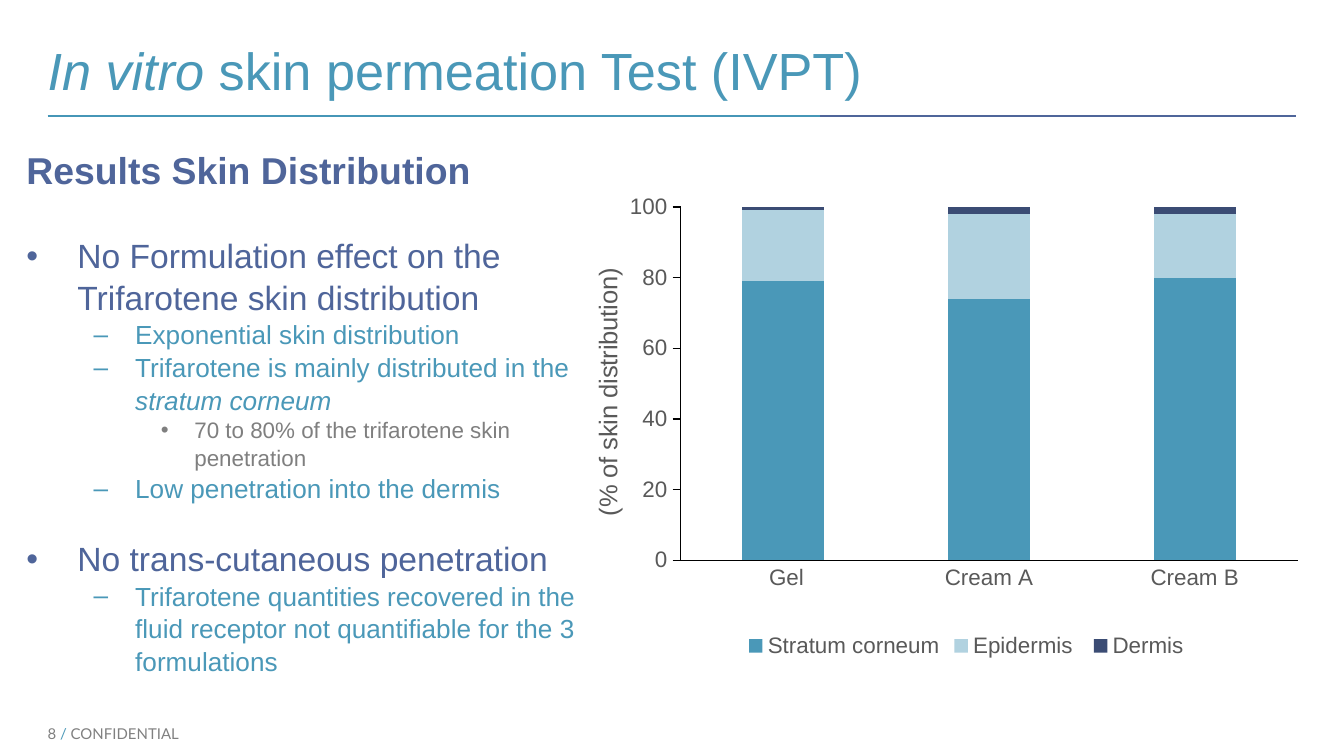
from dataclasses import dataclass
from typing import NamedTuple

from lxml.etree import SubElement
from pptx import Presentation
from pptx.chart.data import CategoryChartData
from pptx.dml.color import RGBColor
from pptx.enum.chart import XL_CHART_TYPE as ChartType
from pptx.enum.chart import XL_LEGEND_POSITION as LegendPos
from pptx.enum.chart import XL_TICK_MARK as Tick
from pptx.enum.shapes import MSO_CONNECTOR as Connector
from pptx.enum.text import MSO_ANCHOR as Anchor
from pptx.enum.text import MSO_AUTO_SIZE as AutoSize
from pptx.enum.text import PP_ALIGN as Align
from pptx.oxml.ns import qn
from pptx.util import Inches, Pt


@dataclass(frozen=True)
class Theme:
    font: str = "Arial"
    footer_font: str = "Lato"
    teal: str = "4A98B8"
    rule_teal: str = "4696B7"
    indigo: str = "4F659A"
    pale: str = "B1D2E0"
    navy: str = "3B4C74"
    grey: str = "7F7F7F"
    footer_grey: str = "808080"
    chart_text: str = "595959"
    black: str = "000000"
    title: float = 28
    heading: float = 20
    axis_title: float = 13.7
    labels: float = 12
    footer: float = 8


class Level(NamedTuple):
    mark: str
    size: float
    color: str
    margin: float
    hanging: float


class Item(NamedTuple):
    level: int
    runs: tuple[str, ...]  # every second run is italic
    before: float = 0


class Area(NamedTuple):
    col: float
    row: float
    cols: float
    rows: float


class Series(NamedTuple):
    name: str
    values: tuple[int, ...]
    color: str


THEME = Theme()
COLUMNS, ROWS = 100, 56.25
CELL = Inches(10) / COLUMNS
LEFT, RIGHT, RULE_SPLIT, RULE_ROW = 3.54, 96.46, 61, 8.62
LINE_SPACING = 1.04

LEVELS = (
    Level("•", 18, THEME.indigo, 0.38, 0.38),
    Level("–", 14, THEME.teal, 0.81, 0.31),
    Level("•", 12, THEME.grey, 1.25, 0.25),
)
FINDINGS = (
    Item(0, ("No Formulation effect on the Trifarotene skin distribution",), 22.5),
    Item(1, ("Exponential skin distribution",)),
    Item(1, ("Trifarotene is mainly distributed in the ", "stratum corneum")),
    Item(2, ("70 to 80% of the trifarotene skin penetration",)),
    Item(1, ("Low penetration into the dermis",)),
    Item(0, ("No trans-cutaneous penetration",), 17.7),
    Item(1, ("Trifarotene quantities recovered in the fluid receptor "
             "not quantifiable for the 3 formulations",)),
)
FORMULATIONS = (" Gel", "Cream A", "Cream B")
SKIN_LAYERS = (
    Series("Stratum corneum", (79, 74, 80), THEME.teal),
    Series("Epidermis ", (20, 24, 18), THEME.pale),
    Series("Dermis", (1, 2, 2), THEME.navy),
)


def grid(cells: float) -> int:
    return round(cells * CELL)


def rgb(color: str) -> RGBColor:
    return RGBColor.from_string(color)


def style(font, size: float, color: str, name: str = THEME.font, bold: bool = False) -> None:
    font.size, font.name, font.bold = Pt(size), name, bold
    font.color.rgb = rgb(color)


def style_line(line, color: str, width: float) -> None:
    line.fill.solid()
    line.fill.fore_color.rgb = rgb(color)
    line.width = Pt(width)


def place(shape, area: Area, anchor=Anchor.TOP):
    """Put a text shape on the grid, without insets."""
    shape.left, shape.top, shape.width, shape.height = map(grid, area)
    frame = shape.text_frame
    frame.margin_left = frame.margin_right = frame.margin_top = frame.margin_bottom = 0
    frame.word_wrap, frame.auto_size = True, AutoSize.NONE
    frame.vertical_anchor = anchor
    return frame


def set_bullet(paragraph, level: Level) -> None:
    props = paragraph._p.get_or_add_pPr()
    props.set("marL", str(Inches(level.margin)))
    props.set("indent", str(-Inches(level.hanging)))
    if level.mark:
        SubElement(SubElement(props, qn("a:buClr")), qn("a:srgbClr"), val=level.color)
        SubElement(props, qn("a:buFont"), typeface=THEME.font)
        SubElement(props, qn("a:buChar"), char=level.mark)
    else:
        SubElement(props, qn("a:buNone"))


def write_item(paragraph, item: Item, level: Level, bold: bool = False) -> None:
    paragraph.level = item.level
    paragraph.alignment = Align.LEFT
    paragraph.line_spacing = LINE_SPACING
    paragraph.space_before, paragraph.space_after = Pt(item.before), Pt(0)
    set_bullet(paragraph, level)
    style(paragraph.font, level.size, level.color, bold=bold)
    for index, text in enumerate(item.runs):
        run = paragraph.add_run()
        run.text = text
        if index % 2:
            run.font.italic = True


def draw_rule(slide, start: float, end: float, color: str) -> None:
    rule = slide.shapes.add_connector(
        Connector.STRAIGHT, grid(start), grid(RULE_ROW), grid(end), grid(RULE_ROW))
    style_line(rule.line, color, 1)
    SubElement(rule._element.spPr, qn("a:effectLst"))


def style_axis(axis, tick) -> None:
    axis.has_major_gridlines = False
    axis.major_tick_mark, axis.minor_tick_mark = tick, Tick.NONE
    style_line(axis.format.line, THEME.black, 0.75)
    style(axis.tick_labels.font, THEME.labels, THEME.chart_text)


def fix_plot_area(chart, **shares: float) -> None:
    plot_area = chart._chartSpace.chart.plotArea
    for old in plot_area.findall(qn("c:layout")):
        plot_area.remove(old)
    layout = plot_area.makeelement(qn("c:layout"))
    plot_area.insert(0, layout)
    manual = SubElement(layout, qn("c:manualLayout"))
    settings = {"layoutTarget": "inner", "xMode": "edge", "yMode": "edge", **shares}
    for key, value in settings.items():
        SubElement(manual, qn(f"c:{key}"), val=str(value))


def draw_chart(slide, area: Area) -> None:
    data = CategoryChartData(number_format="0")
    data.categories = FORMULATIONS
    for layer in SKIN_LAYERS:
        data.add_series(layer.name, layer.values)
    chart = slide.shapes.add_chart(ChartType.COLUMN_STACKED, *map(grid, area), data).chart
    style(chart.font, THEME.labels, THEME.chart_text)
    chart.has_title = False
    fix_plot_area(chart, x=0.123, y=0.17, w=0.814, h=0.643)

    plot = chart.plots[0]
    plot.gap_width, plot.overlap, plot.vary_by_categories = 150, 100, False
    for series, layer in zip(plot.series, SKIN_LAYERS):
        series.format.fill.solid()
        series.format.fill.fore_color.rgb = rgb(layer.color)

    style_axis(chart.category_axis, Tick.NONE)
    share = chart.value_axis
    style_axis(share, Tick.OUTSIDE)
    share.minimum_scale, share.maximum_scale, share.major_unit = 0, 100, 20
    caption = share.axis_title.text_frame
    caption.text = "(% of skin distribution)"
    style(caption.paragraphs[0].font, THEME.axis_title, THEME.chart_text)

    chart.has_legend = True
    chart.legend.position, chart.legend.include_in_layout = LegendPos.BOTTOM, False
    style(chart.legend.font, THEME.labels, THEME.chart_text)


def main() -> None:
    deck = Presentation()
    deck.slide_width, deck.slide_height = grid(COLUMNS), grid(ROWS)
    slide = deck.slides.add_slide(deck.slide_layouts[1])

    # Title and the two-coloured rule under it
    title = place(slide.shapes.title, Area(LEFT, 1, 92.9, 6.5), Anchor.BOTTOM).paragraphs[0]
    title.alignment = Align.LEFT
    style(title.font, THEME.title, THEME.teal)
    for text, italic in (("In vitro ", True), ("skin permeation Test (IVPT)", False)):
        run = title.add_run()
        run.text, run.font.italic = text, italic
    draw_rule(slide, LEFT, RULE_SPLIT, THEME.rule_teal)
    draw_rule(slide, RULE_SPLIT, RIGHT, THEME.indigo)

    # Skin distribution chart
    draw_chart(slide, Area(43.7, 8.45, 56.4, 40.9))

    # Findings
    findings = place(slide.placeholders[1], Area(1.96, 10.8, 42.5, 40.9))
    heading = Level("", THEME.heading, THEME.indigo, 0, 0)
    write_item(findings.paragraphs[0], Item(0, ("Results Skin Distribution",)), heading, bold=True)
    for item in FINDINGS:
        write_item(findings.add_paragraph(), item, LEVELS[item.level])

    # Footer
    footer = place(slide.shapes.add_textbox(0, 0, 0, 0), Area(LEFT, 53.9, 19.7, 1.3)).paragraphs[0]
    grey = THEME.footer_grey
    for text, color in (("8 ", grey), ("/ ", THEME.teal), ("CONFIDENTIAL", grey)):
        run = footer.add_run()
        run.text = text
        style(run.font, THEME.footer, color, THEME.footer_font)

    deck.save("out.pptx")


if __name__ == "__main__":
    main()
